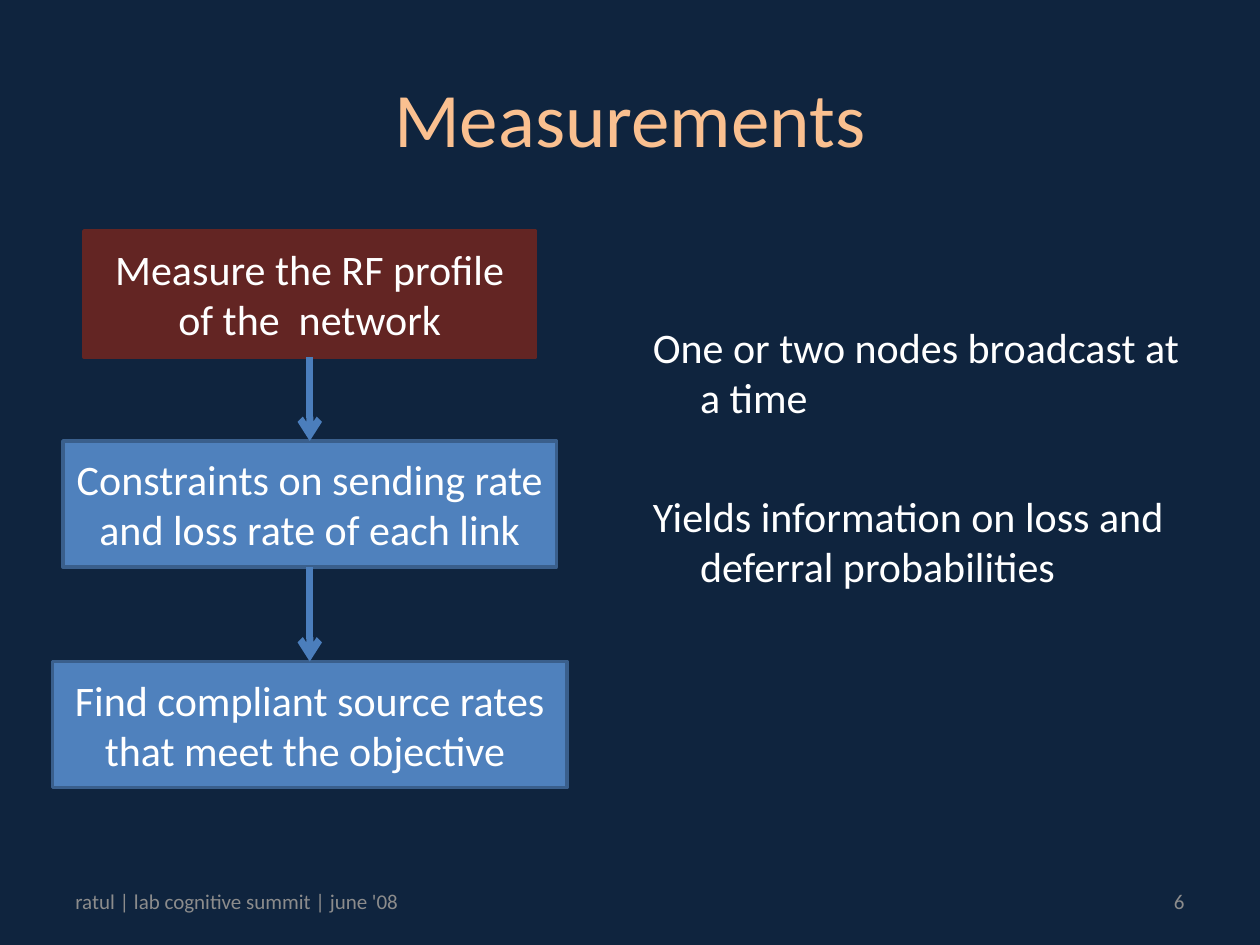
from dataclasses import dataclass
from itertools import pairwise

from lxml.etree import SubElement
from pptx import Presentation
from pptx.dml.color import RGBColor
from pptx.enum.shapes import MSO_CONNECTOR, MSO_SHAPE
from pptx.enum.text import MSO_ANCHOR, PP_ALIGN
from pptx.oxml.ns import qn
from pptx.shapes.autoshape import Shape
from pptx.slide import Slide
from pptx.text.text import TextFrame
from pptx.util import Pt

NAVY = RGBColor(0x0F, 0x24, 0x3E)
PEACH = RGBColor(0xFA, 0xC0, 0x90)
WHITE = RGBColor(0xFF, 0xFF, 0xFF)
GRAY = RGBColor(0x8C, 0x8C, 0x8C)
MAROON = RGBColor(0x63, 0x25, 0x23)
BLUE = RGBColor(0x4F, 0x81, 0xBD)
BLUE_EDGE = RGBColor(0x3A, 0x5F, 0x8C)
ARROW_BLUE = RGBColor(0x4B, 0x7E, 0xBC)

FONT = "Calibri"
FLOW_CENTER = 177
STEP_HEIGHT = 72


@dataclass(frozen=True)
class Label:
    left: float
    top: float
    width: float
    height: float
    lines: tuple[str, ...]
    size: float
    color: RGBColor
    align: PP_ALIGN = PP_ALIGN.LEFT
    anchor: MSO_ANCHOR = MSO_ANCHOR.MIDDLE
    hanging: float = 0
    gap: float = 0


@dataclass(frozen=True)
class Step:
    top: float
    width: float
    text: str
    fill: RGBColor
    edge: RGBColor


LABELS = (
    Label(36, 21.6, 648, 90, ("Measurements",), 44, PEACH, PP_ALIGN.CENTER),
    Label(366, 180, 318, 228,
          ("One or two nodes broadcast at a time",
           "Yields information on loss and deferral probabilities"),
          24, WHITE, anchor=MSO_ANCHOR.TOP, hanging=27, gap=38.9),
    Label(36, 500.5, 210, 28.75, ("ratul | lab cognitive summit | june '08",), 12, GRAY),
    Label(516, 500.5, 168, 28.75, ("6",), 12, GRAY, PP_ALIGN.RIGHT),
)

STEPS = (
    Step(132, 258, "Measure the RF profile of the  network", MAROON, MAROON),
    Step(252, 282, "Constraints on sending rate and loss rate of each link", BLUE, BLUE_EDGE),
    Step(378, 294, "Find compliant source rates that meet the objective ", BLUE, BLUE_EDGE),
)


def write_lines(frame: TextFrame, lines: tuple[str, ...], size: float, color: RGBColor,
                align: PP_ALIGN, anchor: MSO_ANCHOR, hanging: float = 0, gap: float = 0) -> None:
    frame.word_wrap = True
    frame.vertical_anchor = anchor
    for index, line in enumerate(lines):
        para = frame.add_paragraph() if index else frame.paragraphs[0]
        para.alignment = align
        if index:
            para.space_before = Pt(gap)
        if hanging:
            properties = para._p.get_or_add_pPr()
            properties.set("marL", str(Pt(hanging)))
            properties.set("indent", str(-Pt(hanging)))
        span = para.add_run()
        span.text = line
        span.font.name = FONT
        span.font.size = Pt(size)
        span.font.color.rgb = color


def draw_label(page: Slide, label: Label) -> None:
    box = page.shapes.add_textbox(Pt(label.left), Pt(label.top), Pt(label.width), Pt(label.height))
    write_lines(box.text_frame, label.lines, label.size, label.color,
                label.align, label.anchor, label.hanging, label.gap)


def draw_step(page: Slide, step: Step) -> Shape:
    box = page.shapes.add_shape(MSO_SHAPE.RECTANGLE, Pt(FLOW_CENTER - step.width / 2),
                                Pt(step.top), Pt(step.width), Pt(STEP_HEIGHT))
    box.shadow.inherit = False
    box.fill.solid()
    box.fill.fore_color.rgb = step.fill
    box.line.color.rgb = step.edge
    box.line.width = Pt(2)
    write_lines(box.text_frame, (step.text,), 24, WHITE, PP_ALIGN.CENTER, MSO_ANCHOR.MIDDLE)
    return box


def draw_arrow(page: Slide, upper: Shape, lower: Shape) -> None:
    arrow = page.shapes.add_connector(MSO_CONNECTOR.STRAIGHT, Pt(FLOW_CENTER),
                                      upper.top + upper.height, Pt(FLOW_CENTER), lower.top)
    arrow.begin_connect(upper, 2)
    arrow.end_connect(lower, 0)
    arrow.line.color.rgb = ARROW_BLUE
    arrow.line.width = Pt(4)
    SubElement(arrow.line._get_or_add_ln(), qn("a:tailEnd"), type="arrow")
    SubElement(arrow._element.spPr, qn("a:effectLst"))


def main() -> None:
    deck = Presentation()
    deck.slide_width = Pt(720)
    deck.slide_height = Pt(540)
    page = deck.slides.add_slide(deck.slide_layouts[6])
    page.background.fill.solid()
    page.background.fill.fore_color.rgb = NAVY
    for label in LABELS:
        draw_label(page, label)
    boxes = [draw_step(page, step) for step in STEPS]
    for upper, lower in pairwise(boxes):
        draw_arrow(page, upper, lower)
    deck.save("out.pptx")


if __name__ == "__main__":
    main()
